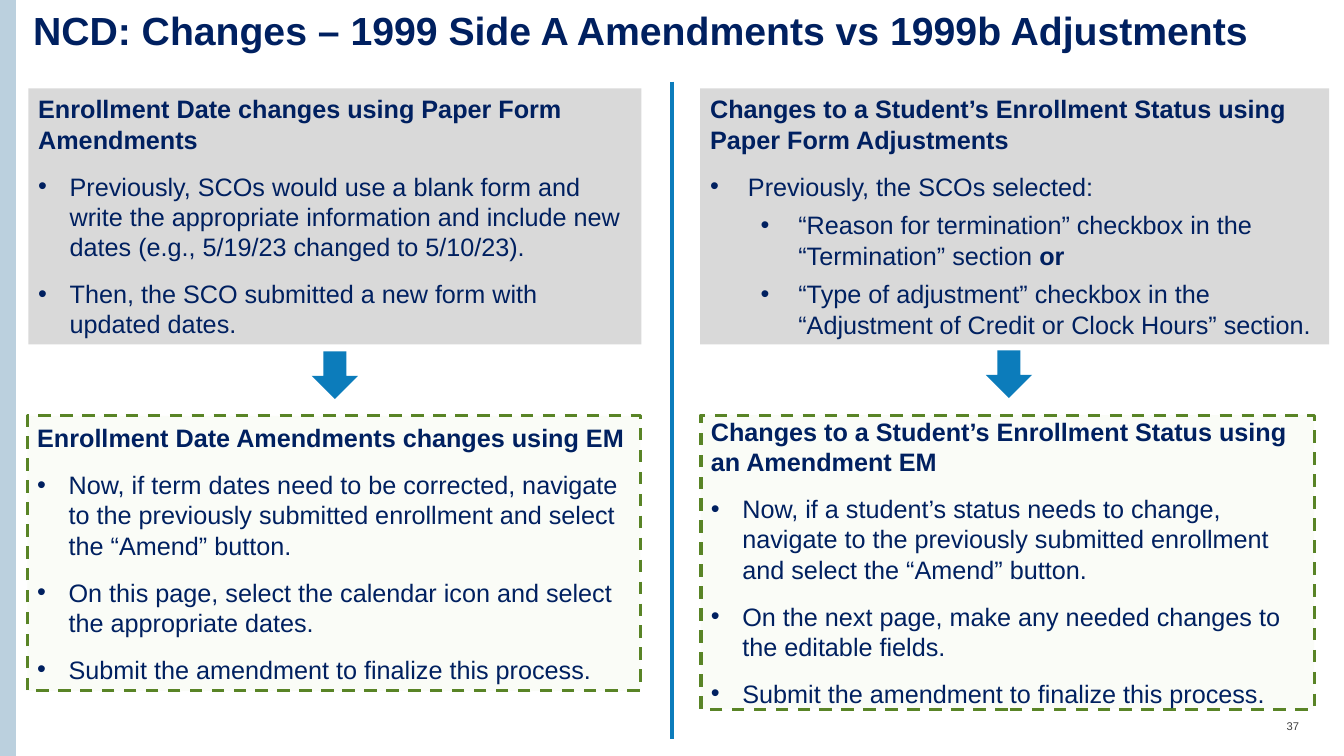
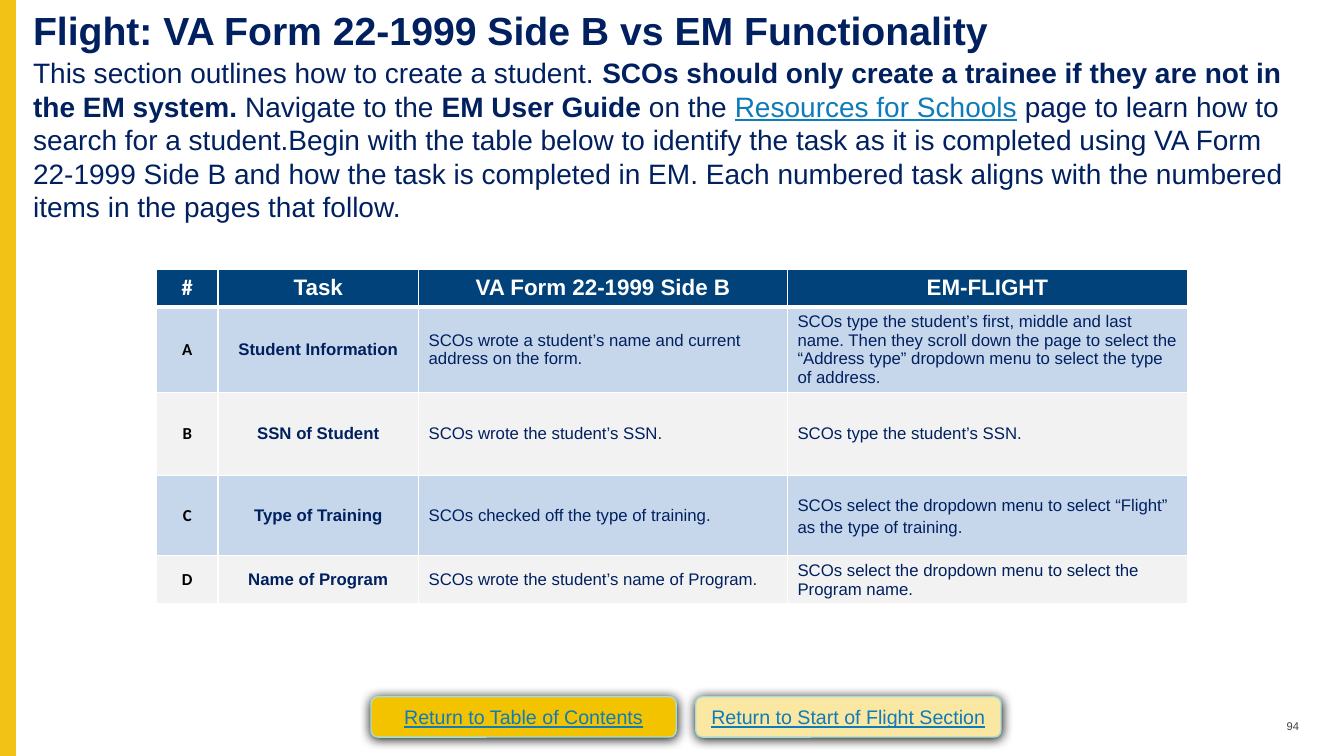
from dataclasses import dataclass
from typing import NamedTuple, Optional

from lxml.etree import SubElement
from pptx import Presentation
from pptx.dml.color import RGBColor
from pptx.enum.dml import MSO_LINE
from pptx.enum.shapes import MSO_CONNECTOR, MSO_SHAPE
from pptx.enum.text import MSO_ANCHOR, PP_ALIGN
from pptx.oxml.ns import qn
from pptx.util import Pt


@dataclass(frozen=True)
class Theme:
    font: str = "Arial"
    key_font: str = "Calibri"
    navy: str = "002060"
    accent: str = "0C7CBB"
    link: str = "0E7BBA"
    white: str = "FFFFFF"
    black: str = "000000"
    page: str = "404040"
    blue_band: str = "BBD0DE"
    gold_band: str = "F2C217"
    before_fill: str = "D9D9D9"
    after_fill: str = "DFF0CA"
    after_line: str = "598426"
    header_fill: str = "004279"
    row_fills: tuple = ("C7D7EB", "F2F2F2")
    button_line: str = "A3DFD6"
    button_fills: tuple = ("F3C300", "FAE7A2")
    title_size: float = 28
    intro_size: float = 20
    body_size: float = 18
    header_size: float = 16
    button_size: float = 14
    cell_size: float = 12
    page_size: float = 8


T = Theme()


class Box(NamedTuple):
    x: float
    y: float
    w: float
    h: float

    def emu(self) -> list:
        return [Pt(v) for v in self]


class Run(NamedTuple):
    text: str
    bold: bool = False
    color: str = T.navy
    underline: bool = False
    font: str = T.font


@dataclass(frozen=True)
class Para:
    runs: tuple
    after: float = 12
    spacing: Optional[float] = None
    align: PP_ALIGN = PP_ALIGN.LEFT
    bullet: bool = False
    left: float = 0
    hang: float = 0
    level: int = 0


@dataclass(frozen=True)
class Card:
    box: Box
    paras: tuple
    is_new: bool = False


def head(text: str) -> Para:
    return Para((Run(text, bold=True),))


def item(*texts: str, left: float = 22.5, hang: float = 22.5, after: float = 12, level: int = 0) -> Para:
    """Bulleted paragraph; texts alternate between regular and bold."""
    runs = tuple(Run(t, bold=i % 2 == 1) for i, t in enumerate(texts))
    return Para(runs, after=after, bullet=True, left=left, hang=hang, level=level)


def write(tf, paras: tuple, size: float) -> None:
    for i, para in enumerate(paras):
        p = tf.paragraphs[0] if i == 0 else tf.add_paragraph()
        fmt = {"level": para.level, "alignment": para.align, "space_after": Pt(para.after)}
        if para.spacing:
            fmt["line_spacing"] = para.spacing
        for name, value in fmt.items():
            setattr(p, name, value)
        if para.bullet:
            pPr = p._p.get_or_add_pPr()
            pPr.set("marL", str(Pt(para.left)))
            pPr.set("indent", str(-Pt(para.hang)))
            SubElement(pPr, qn("a:buFont"), typeface=T.font)
            SubElement(pPr, qn("a:buChar"), char="•")
        for run in para.runs:
            r = p.add_run()
            r.text = run.text
            fmt = {"name": run.font, "size": Pt(size), "bold": run.bold, "underline": run.underline}
            for name, value in fmt.items():
                setattr(r.font, name, value)
            r.font.color.rgb = RGBColor.from_string(run.color)


def set_frame(tf, inset_x: float, inset_y: float, anchor: MSO_ANCHOR) -> None:
    fmt = {
        "word_wrap": True, "vertical_anchor": anchor,
        "margin_left": Pt(inset_x), "margin_right": Pt(inset_x),
        "margin_top": Pt(inset_y), "margin_bottom": Pt(inset_y),
    }
    for name, value in fmt.items():
        setattr(tf, name, value)


def add_text(s, box: Box, para: Para, size: float, anchor: MSO_ANCHOR = MSO_ANCHOR.TOP) -> None:
    tf = s.shapes.add_textbox(*box.emu()).text_frame
    set_frame(tf, 0, 0, anchor)
    write(tf, (para,), size)


def add_shape(s, kind: MSO_SHAPE, box: Box, fill: str, line: Optional[str] = None, width: float = 1):
    sp = s.shapes.add_shape(kind, *box.emu())
    sp.shadow.inherit = False
    sp.fill.solid()
    sp.fill.fore_color.rgb = RGBColor.from_string(fill)
    if line:
        sp.line.color.rgb = RGBColor.from_string(line)
        sp.line.width = Pt(width)
    else:
        sp.line.fill.background()
    return sp


def add_base(prs, band: str, title: str, number: int):
    """Blank slide with the side band, title and page number."""
    s = prs.slides.add_slide(prs.slide_layouts[6])
    add_shape(s, MSO_SHAPE.RECTANGLE, Box(0, 0, 11.4, 540), band)
    add_text(s, Box(23.6, 10.8, 900, 30), Para((Run(title, bold=True),), after=0, spacing=0.8), T.title_size)
    page = Para((Run(str(number), color=T.page),), align=PP_ALIGN.RIGHT)
    add_text(s, Box(898, 510.5, 30, 16.5), page, T.page_size, MSO_ANCHOR.MIDDLE)
    return s


def add_card(s, card: Card) -> None:
    if card.is_new:
        sp = add_shape(s, MSO_SHAPE.RECTANGLE, card.box, T.after_fill, T.after_line, 2.25)
        sp.line.dash_style = MSO_LINE.DASH
        color = sp._element.spPr.find(qn("a:solidFill"))[0]
        SubElement(color, qn("a:alpha"), val="15000")
    else:
        sp = add_shape(s, MSO_SHAPE.RECTANGLE, card.box, T.before_fill)
    set_frame(sp.text_frame, 7.2, 0 if card.is_new else 3.6, MSO_ANCHOR.MIDDLE)
    write(sp.text_frame, card.paras, T.body_size)


def add_button(s, box: Box, text: str, fill: str) -> None:
    sp = add_shape(s, MSO_SHAPE.ROUNDED_RECTANGLE, box, fill, T.button_line)
    effects = sp._element.spPr.find(qn("a:effectLst"))
    shadow = SubElement(effects, qn("a:outerShdw"), blurRad=str(Pt(8.5)), dist=str(Pt(1)),
                        dir="5400000", algn="t", rotWithShape="0")
    SubElement(shadow, qn("a:srgbClr"), val=T.black)
    set_frame(sp.text_frame, 0, 3.6, MSO_ANCHOR.MIDDLE)
    label = Para((Run(text, color=T.link, underline=True),), after=0, align=PP_ALIGN.CENTER)
    write(sp.text_frame, (label,), T.button_size)


def set_borders(cell, top: float, bottom: float) -> None:
    tcPr = cell._tc.get_or_add_tcPr()
    for side, width in {"L": 1, "R": 1, "T": top, "B": bottom}.items():
        ln = SubElement(tcPr, qn(f"a:ln{side}"), w=str(Pt(width)))
        SubElement(SubElement(ln, qn("a:solidFill")), qn("a:srgbClr"), val=T.white)


def add_task_table(s, box: Box, widths: tuple, heights: tuple, rows: tuple) -> None:
    table = s.shapes.add_table(len(rows), len(widths), *box.emu()).table
    for column, width in zip(table.columns, widths):
        column.width = Pt(width)
    for i, (row, height) in enumerate(zip(rows, heights)):
        table.rows[i].height = Pt(height)
        header = i == 0
        fill = T.header_fill if header else T.row_fills[(i - 1) % 2]
        for j, text in enumerate(row):
            cell = table.cell(i, j)
            set_borders(cell, top=3 if i == 1 else 1, bottom=3 if header else 1)
            cell.fill.solid()
            cell.fill.fore_color.rgb = RGBColor.from_string(fill)
            fmt = {"vertical_anchor": MSO_ANCHOR.MIDDLE, "margin_top": Pt(1.8), "margin_bottom": Pt(1.8)}
            for name, value in fmt.items():
                setattr(cell, name, value)
            color = T.white if header else T.black if j == 0 else T.navy
            run = Run(text, header or j < 2, color, font=T.font if j else T.key_font)
            align = PP_ALIGN.CENTER if header or j < 2 else PP_ALIGN.LEFT
            spacing = 1.15 if (i, j) == (3, 3) else None
            write(cell.text_frame, (Para((run,), 0, spacing, align),),
                  T.header_size if header else T.cell_size)


SUBMIT = item("Submit the amendment to finalize this process.")
CARDS = (
    Card(Box(20.2, 63.1, 438, 183), (
        head("Enrollment Date changes using Paper Form Amendments"),
        item("Previously, SCOs would use a blank form and write the appropriate information and "
             "include new dates (e.g., 5/19/23 changed to 5/10/23)."),
        item("Then, the SCO submitted a new form with updated dates."),
    )),
    Card(Box(19.5, 297, 438, 196.5), (
        head("Enrollment Date Amendments changes using EM"),
        item("Now, if term dates need to be corrected, navigate to the previously submitted "
             "enrollment and select the “Amend” button."),
        item("On this page, select the calendar icon and select the appropriate dates."),
        SUBMIT,
    ), is_new=True),
    Card(Box(500.2, 63.1, 449.3, 183), (
        head("Changes to a Student’s Enrollment Status using Paper Form Adjustments"),
        item("Previously, the SCOs selected:", left=27, hang=27, after=6),
        item("“Reason for termination” checkbox in the “Termination” section ", "or",
             left=63, hang=27, after=6, level=1),
        item("“Type of adjustment” checkbox in the “Adjustment of Credit or Clock Hours” section.",
             left=63, hang=27, after=6, level=1),
    )),
    Card(Box(500.7, 296.6, 438, 210), (
        head("Changes to a Student’s Enrollment Status using an Amendment EM"),
        item("Now, if a student’s status needs to change, navigate to the previously submitted "
             "enrollment and select the “Amend” button."),
        item("On the next page, make any needed changes to the editable fields."),
        SUBMIT,
    ), is_new=True),
)

INTRO = Para((
    Run("This section outlines how to create a student. "),
    Run("SCOs should only create a trainee if they are not in the EM system. ", bold=True),
    Run("Navigate to the "),
    Run("EM User Guide ", bold=True),
    Run("on the "),
    Run("Resources for Schools", color=T.link, underline=True),
    Run(" page to learn how to search for a student.Begin with the table below to identify the task "
        "as it is completed using VA Form 22-1999 Side B and how the task is completed in EM. "
        "Each numbered task aligns with the numbered items in the pages that follow."),
))

TASKS = (
    ("#", "Task", "VA Form 22-1999 Side B", "EM-FLIGHT"),
    ("A", "Student Information", "SCOs wrote a student’s name and current address on the form.",
     "SCOs type the student’s first, middle and last name. Then they scroll down the page to select "
     "the “Address type” dropdown menu to select the type of address."),
    ("B", "SSN of Student", "SCOs wrote the student’s SSN.", "SCOs type the student’s SSN."),
    ("C", "Type of Training", "SCOs checked off the type of training.",
     "SCOs select the dropdown menu to select “Flight” as the type of training."),
    ("D", "Name of Program", "SCOs wrote the student’s name of Program.",
     "SCOs select the dropdown menu to select the Program name."),
)
BUTTONS = ("Return to Table of Contents", "Return to Start of Flight Section")


def build_changes(prs) -> None:
    s = add_base(prs, T.blue_band, "NCD: Changes – 1999 Side A Amendments vs 1999b Adjustments", 37)
    for card in CARDS:
        add_card(s, card)
    divider = s.shapes.add_connector(MSO_CONNECTOR.STRAIGHT, Pt(480), Pt(58.3), Pt(480), Pt(527.8))
    divider.line.color.rgb = RGBColor.from_string(T.accent)
    divider.line.width = Pt(2.25)
    SubElement(divider._element.spPr, qn("a:effectLst"))
    for x, y in ((222.7, 251), (704.2, 250.3)):
        add_shape(s, MSO_SHAPE.DOWN_ARROW, Box(x, y, 33, 34), T.accent)


def build_flight(prs) -> None:
    s = add_base(prs, T.gold_band, "Flight: VA Form 22-1999 Side B vs EM Functionality", 94)
    add_text(s, Box(23.6, 39.6, 902, 70.6), INTRO, T.intro_size)
    add_task_table(s, Box(111.8, 192.2, 736.5, 238), (43.9, 143.3, 263.5, 285.8),
                   (27, 60, 59, 57.5, 34.5), TASKS)
    for i, (text, fill) in enumerate(zip(BUTTONS, T.button_fills)):
        add_button(s, Box(265 + 232 * i, 497.7, 218, 28.8), text, fill)


def main() -> None:
    prs = Presentation()
    prs.slide_width, prs.slide_height = Pt(960), Pt(540)
    build_changes(prs)
    build_flight(prs)
    prs.save("out.pptx")


if __name__ == "__main__":
    main()
